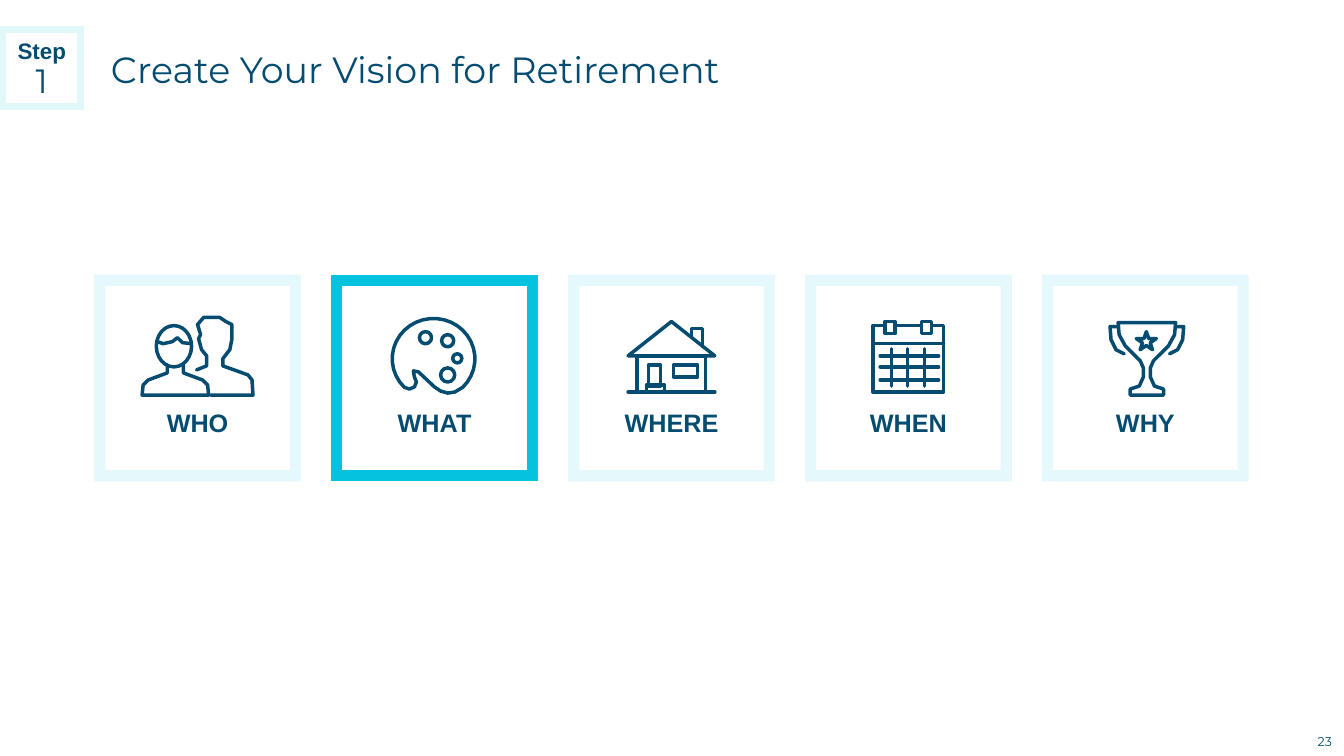
"""Build the retirement vision slide with five question cards."""
from math import cos, radians, sin
from lxml.etree import SubElement
from pptx import Presentation
from pptx.dml.color import RGBColor
from pptx.enum.shapes import MSO_CONNECTOR, MSO_SHAPE
from pptx.enum.text import MSO_ANCHOR, MSO_AUTO_SIZE, PP_ALIGN
from pptx.oxml.ns import qn
from pptx.util import Inches, Pt

NAVY = RGBColor(0x05, 0x4C, 0x70)
CYAN = RGBColor(0x05, 0xC3, 0xDE)
PALE = RGBColor(0xE1, 0xF8, 0xFB)
WHITE = RGBColor(0xFF, 0xFF, 0xFF)
RECT, OVAL = MSO_SHAPE.RECTANGLE, MSO_SHAPE.OVAL
ROOF, STAR = MSO_SHAPE.ISOSCELES_TRIANGLE, MSO_SHAPE.STAR_5_POINT


def set_line(sp, color, width, join="round", alpha=None):
    sp.line.color.rgb = color
    sp.line.width = Pt(width)
    ln = sp._element.spPr.find(qn("a:ln"))
    SubElement(ln, qn(f"a:{join}"))
    if join == "round":
        ln.set("cap", "rnd")
    if alpha:
        clr = ln.find(qn("a:solidFill")).find(qn("a:srgbClr"))
        SubElement(clr, qn("a:alpha")).set("val", str(alpha * 1000))
    SubElement(sp._element.spPr, qn("a:effectLst"))


def add_run(p, text, size, font, bold=False):
    r = p.add_run()
    r.text = text
    r.font.size = Pt(size)
    r.font.name = font
    r.font.bold = bold
    r.font.color.rgb = NAVY


bust = [(1.66, 3.62), (1.66, 3.7), (1.47, 3.77), (1.42, 3.82), (1.41, 3.92)]
bust += [(3.48 - x, y) for x, y in reversed(bust)]
fringe = [(1.56, 3.39), (1.62, 3.41), (1.71, 3.39), (1.76, 3.35), (1.81, 3.4), (1.9, 3.41)]
partner = [(1.95, 3.67), (2.05, 3.63), (2.05, 3.53), (2, 3.47), (1.97, 3.36), (1.99, 3.32),
           (1.96, 3.22), (2.02, 3.15), (2.18, 3.15), (2.24, 3.19), (2.3, 3.22), (2.3, 3.37),
           (2.28, 3.47), (2.21, 3.56), (2.21, 3.63), (2.46, 3.72), (2.5, 3.77), (2.51, 3.92),
           (2.09, 3.92)]
palette = [(4.3 + 0.41 * cos(radians(a)), 3.56 + 0.4 * sin(radians(a)))
           for a in range(135, 406, 10)]
palette += [(4.51, 3.89), (4.44, 3.9), (4.37, 3.88), (4.31, 3.84), (4.15, 3.69), (4.1, 3.68),
            (4.11, 3.74), (4.13, 3.79), (4.11, 3.84), (4.06, 3.86), palette[0]]
chimney = [(6.97, 3.44), (6.97, 3.26), (6.86, 3.26), (6.86, 3.34)]
sheet = [(8.78, 3.23), (8.66, 3.23), (8.66, 3.89)]
sheet += [(18.02 - x, y) for x, y in reversed(sheet)]
cup = [(11.09, 3.2), (11.1, 3.32), (11.16, 3.43), (11.31, 3.58), (11.34, 3.65), (11.34, 3.74),
       (11.3, 3.83), (11.21, 3.86), (11.21, 3.92)]
cup += [(22.75 - x, y) for x, y in reversed(cup)] + cup[:1]
handle = [(11.09, 3.24), (11.01, 3.24), (11.02, 3.37), (11.07, 3.47), (11.15, 3.51)]
other_handle = [(22.75 - x, y) for x, y in handle]

CARDS = [
    ("WHO", [(OVAL, 1.55, 3.23, 0.35, 0.41)], [], [bust, fringe, partner]),
    ("WHAT", [(OVAL, x, y, d, d) for x, y, d in (
        (4.16, 3.29, 0.12), (4.38, 3.32, 0.12), (4.49, 3.51, 0.09), (4.37, 3.65, 0.14))],
     [], [palette]),
    ("WHERE", [(RECT, 6.32, 3.53, 0.68, 0.36), (ROOF, 6.23, 3.19, 0.86, 0.34),
               (RECT, 6.43, 3.62, 0.12, 0.21), (RECT, 6.68, 3.62, 0.24, 0.12),
               (RECT, 6.41, 3.82, 0.18, 0.07)],
     [(6.23, 3.89, 7.09, 3.89)], [chimney]),
    ("WHEN", [(RECT, x, 3.19, 0.1, 0.12) for x in (8.78, 9.14)],
     [(8.88, 3.23, 9.14, 3.23), (8.66, 3.41, 9.36, 3.41)]
     + [(x, 3.46, x, 3.83) for x in (8.84, 9, 9.17)]
     + [(8.73, y, 9.31, y) for y in (3.53, 3.64, 3.77)], [sheet]),
    ("WHY", [(STAR, 11.27, 3.29, 0.2, 0.18)], [], [cup, handle, other_handle]),
]

prs = Presentation()
prs.slide_width, prs.slide_height = Inches(13.33), Inches(7.5)
s = prs.slides.add_slide(prs.slide_layouts[5])

title = s.shapes.title
title.left, title.top, title.width, title.height = map(Inches, (1, 0.28, 11.5, 0.81))
tf = title.text_frame
tf.auto_size = MSO_AUTO_SIZE.NONE
tf.vertical_anchor = MSO_ANCHOR.MIDDLE
tf.margin_left = Inches(0.1)
tf.margin_top = tf.margin_right = tf.margin_bottom = 0
tf.paragraphs[0].alignment = PP_ALIGN.LEFT
add_run(tf.paragraphs[0], "Create Your Vision for Retirement", 26, "Montserrat")

size = Inches(1.94)
for i, (label, presets, lines, outlines) in enumerate(CARDS):
    shapes = s.shapes.add_group_shape().shapes
    left = Inches(0.99) + i * Inches(2.35)

    sp = shapes.add_shape(RECT, left, Inches(2.78), size, size)
    sp.fill.background()
    set_line(sp, CYAN, 8, "miter", None if label == "WHAT" else 10)

    tb = shapes.add_textbox(left, Inches(3.99), size, Inches(0.4))
    tb.text_frame.word_wrap = True
    p = tb.text_frame.paragraphs[0]
    p.alignment = PP_ALIGN.CENTER
    add_run(p, label, 18, "Arial", True)

    for preset, *box in presets:
        sp = shapes.add_shape(preset, *map(Inches, box))
        sp.fill.background()
        set_line(sp, NAVY, 2.5)

    for ends in lines:
        cx = shapes.add_connector(MSO_CONNECTOR.STRAIGHT, *map(Inches, ends))
        set_line(cx, NAVY, 2.5)

    for outline in outlines:
        pts = [(Inches(x), Inches(y)) for x, y in outline]
        fb = shapes.build_freeform(*pts[0])
        fb.add_line_segments(pts[1:], close=pts[0] == pts[-1])
        sp = fb.convert_to_shape()
        sp.fill.background()
        set_line(sp, NAVY, 2.5)

step = s.shapes.add_shape(RECT, *map(Inches, (0.03, 0.29, 0.77, 0.77)))
step.fill.solid()
step.fill.fore_color.rgb = WHITE
set_line(step, PALE, 5, "miter")
tf = step.text_frame
tf.word_wrap = True
tf.vertical_anchor = MSO_ANCHOR.MIDDLE
tf.margin_left = tf.margin_right = tf.margin_bottom = 0
tf.margin_top = Inches(0.05)
for p, run in ((tf.paragraphs[0], ("Step", 16, "Arial", True)),
               (tf.add_paragraph(), ("1", 24, "Montserrat"))):
    p.alignment = PP_ALIGN.CENTER
    p.line_spacing = 0.9
    add_run(p, *run)

number = s.shapes.add_textbox(*map(Inches, (12.97, 7.23, 0.34, 0.25)))
tf = number.text_frame
tf.word_wrap = True
tf.vertical_anchor = MSO_ANCHOR.MIDDLE
tf.margin_left = tf.margin_top = tf.margin_right = tf.margin_bottom = 0
tf.paragraphs[0].alignment = PP_ALIGN.CENTER
add_run(tf.paragraphs[0], "23", 9, "Montserrat")

prs.save("out.pptx")
